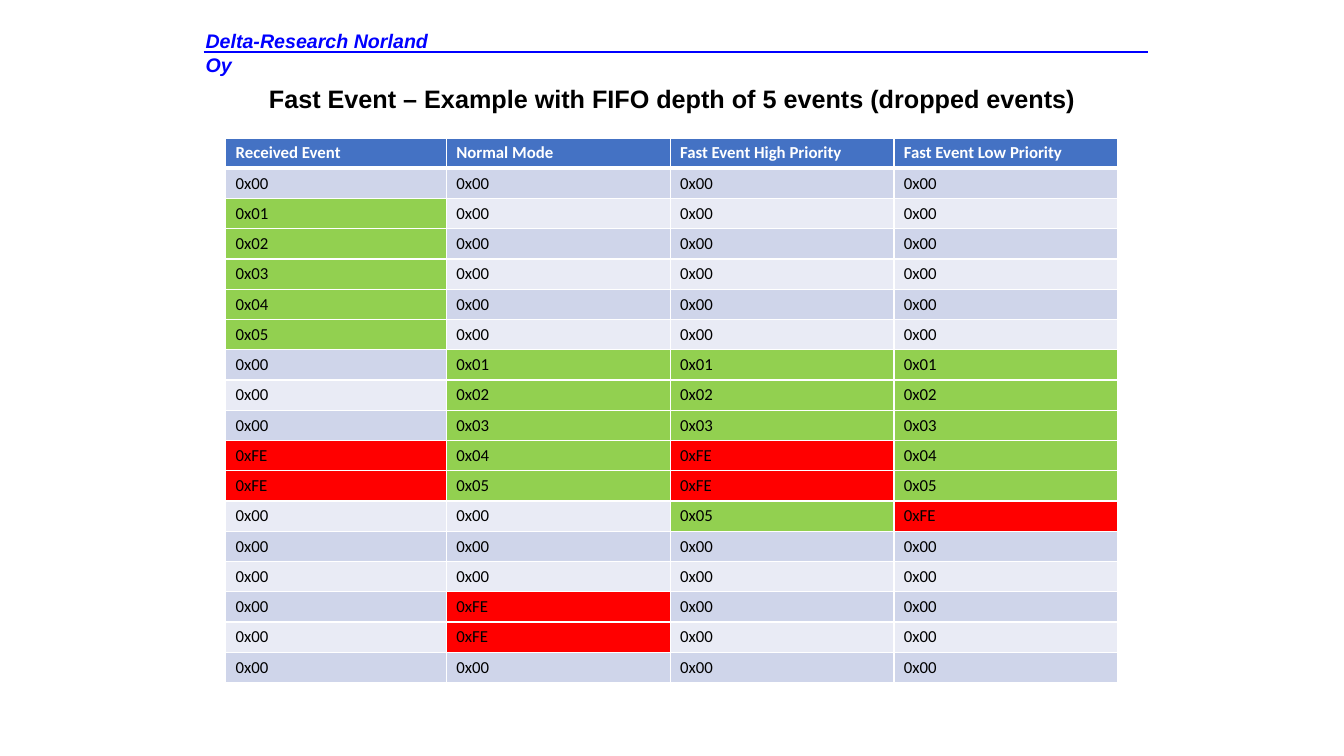
from lxml.etree import SubElement
from pptx import Presentation
from pptx.dml.color import RGBColor
from pptx.enum.shapes import MSO_CONNECTOR
from pptx.enum.text import MSO_ANCHOR, PP_ALIGN
from pptx.oxml.ns import qn
from pptx.util import Cm, Pt

COMPANY = "Delta-Research Norland Oy"
TITLE = "Fast Event – Example with FIFO depth of 5 events (dropped events)"
HEADINGS = ["Received Event", "Normal Mode",
            "Fast Event High Priority", "Fast Event Low Priority"]
EVENTS = [
    "00 00 00 00",
    "01 00 00 00",
    "02 00 00 00",
    "03 00 00 00",
    "04 00 00 00",
    "05 00 00 00",
    "00 01 01 01",
    "00 02 02 02",
    "00 03 03 03",
    "FE 04 FE 04",
    "FE 05 FE 05",
    "00 00 05 FE",
    "00 00 00 00",
    "00 00 00 00",
    "00 FE 00 00",
    "00 FE 00 00",
    "00 00 00 00",
]
ROWS = [HEADINGS] + [[f"0x{code}" for code in line.split()] for line in EVENTS]

BLUE, WHITE, BLACK = "0000FF", "FFFFFF", "000000"
HEADER_FILL, BANDS = "4472C4", ["E9EBF5", "CFD5EA"]
QUEUED, FAST = "92D050", "FF0000"

COMPANY_FONT = {"name": "Arial", "size": Pt(14), "bold": True, "italic": True}
TITLE_FONT = {"name": "Arial", "size": Pt(18), "bold": True}
HEADER_FONT = {"name": "Calibri", "size": Pt(12), "bold": True}
EVENT_FONT = {"name": "Calibri", "size": Pt(12), "bold": False}

TABLE_LEFT, TABLE_TOP, TABLE_HEIGHT = Cm(5.69), Cm(3.48), Cm(13.73)
COLUMN_WIDTHS = [Cm(5.56)] + [Cm(5.64)] * 3
CELL_FORMAT = {"margin_left": Cm(0.25), "margin_right": Cm(0.25),
               "margin_top": Cm(0.1), "margin_bottom": Cm(0.1),
               "vertical_anchor": MSO_ANCHOR.MIDDLE}


def color(hex_code):
    return RGBColor.from_string(hex_code)


def write(frame, text, font_format, hex_code, align=PP_ALIGN.LEFT):
    para = frame.paragraphs[0]
    para.alignment = align
    span = para.add_run()
    span.text = text
    for name, value in font_format.items():
        setattr(span.font, name, value)
    span.font.color.rgb = color(hex_code)


def add_text(page, position, anchor, *text_args):
    box = page.shapes.add_textbox(*position)
    box.text_frame.word_wrap = True
    box.text_frame.vertical_anchor = anchor
    write(box.text_frame, *text_args)


def add_rule(page):
    """Draw the blue line under the company name."""
    rule = page.shapes.add_connector(
        MSO_CONNECTOR.STRAIGHT, Cm(5.13), Cm(1.32), Cm(28.93), Cm(1.32))
    rule.line.color.rgb = color(BLUE)
    rule.line.width = Pt(1.5)
    SubElement(rule._element.spPr, qn("a:effectLst"))


def set_borders(cell, widths):
    """Give the cell white borders; widths maps each side to points."""
    properties = cell._tc.get_or_add_tcPr()
    for side, points in widths.items():
        line = SubElement(properties, qn(f"a:ln{side}"), w=str(Pt(points)))
        fill = SubElement(line, qn("a:solidFill"))
        SubElement(fill, qn("a:srgbClr"), val=WHITE)


def cell_fill(row, text):
    if row == 0:
        return HEADER_FILL
    if text == "0x00":
        return BANDS[row % 2]
    return FAST if text == "0xFE" else QUEUED


def add_event_table(page):
    table = page.shapes.add_table(
        len(ROWS), len(HEADINGS), TABLE_LEFT, TABLE_TOP,
        sum(COLUMN_WIDTHS), TABLE_HEIGHT).table
    for column, width in zip(table.columns, COLUMN_WIDTHS):
        column.width = width
    for row, texts in enumerate(ROWS):
        table.rows[row].height = TABLE_HEIGHT // len(ROWS)
        font_format, ink = (EVENT_FONT, BLACK) if row else (HEADER_FONT, WHITE)
        borders = {"L": 1, "R": 1, "T": 3 if row == 1 else 1,
                   "B": 3 if row == 0 else 1}
        for column, text in enumerate(texts):
            cell = table.cell(row, column)
            for name, value in CELL_FORMAT.items():
                setattr(cell, name, value)
            set_borders(cell, borders)
            cell.fill.solid()
            cell.fill.fore_color.rgb = color(cell_fill(row, text))
            write(cell.text_frame, text, font_format, ink)


def main():
    deck = Presentation()
    deck.slide_width, deck.slide_height = Cm(33.87), Cm(19.05)
    page = deck.slides.add_slide(deck.slide_layouts[6])
    add_text(page, (Cm(4.93), Cm(0.61), Cm(6.6), Cm(0.84)), MSO_ANCHOR.TOP,
             COMPANY, COMPANY_FONT, BLUE)
    add_rule(page)
    add_text(page, (Cm(5.51), Cm(1.47), Cm(22.86), Cm(2.01)), MSO_ANCHOR.MIDDLE,
             TITLE, TITLE_FONT, BLACK, PP_ALIGN.CENTER)
    add_event_table(page)
    deck.save("out.pptx")


if __name__ == "__main__":
    main()
